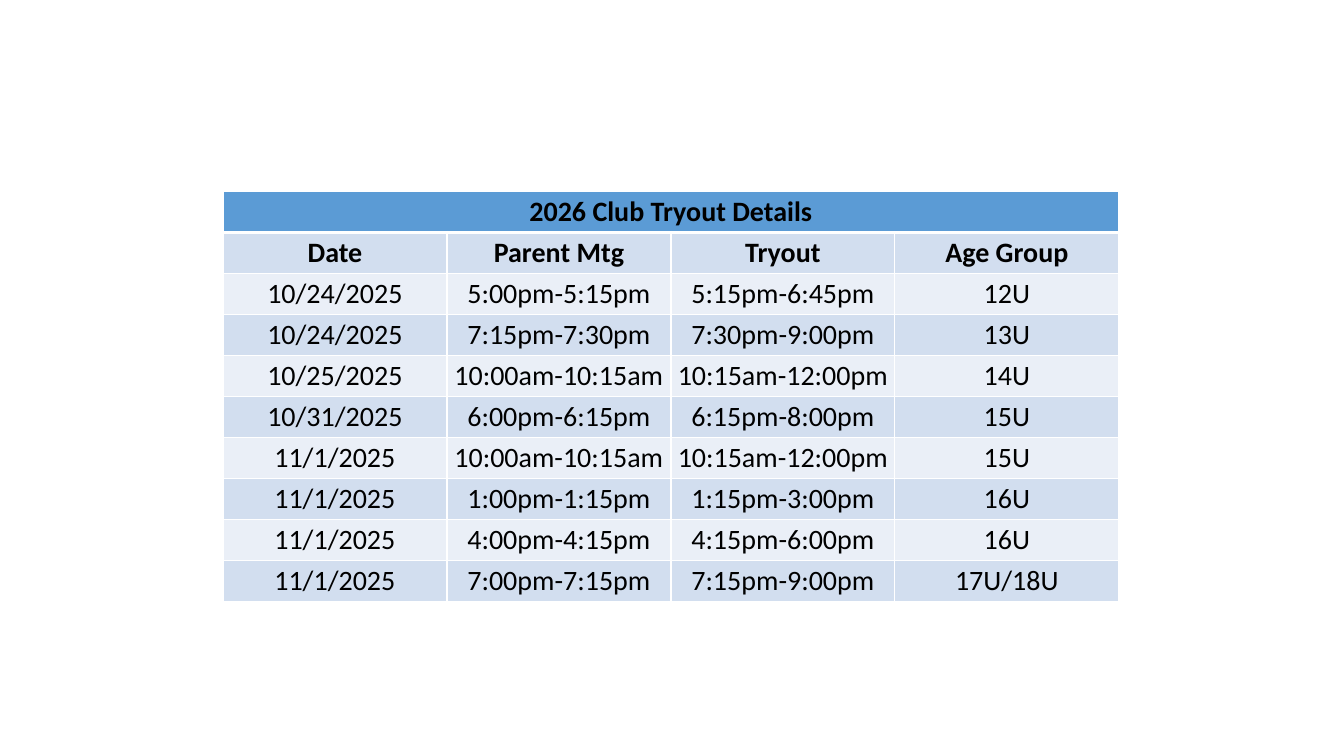
from lxml.etree import SubElement
from pptx import Presentation
from pptx.dml.color import RGBColor
from pptx.enum.text import MSO_ANCHOR, PP_ALIGN
from pptx.oxml.ns import qn
from pptx.util import Cm, Pt

HEADING_BLUE = RGBColor(0x5B, 0x9B, 0xD5)
BAND_DARK = RGBColor(0xD2, 0xDE, 0xEF)
BAND_LIGHT = RGBColor(0xEA, 0xEF, 0xF7)
BLACK = RGBColor(0, 0, 0)
WHITE = RGBColor(0xFF, 0xFF, 0xFF)

HEADING = "2026 Club Tryout Details"
SCHEDULE = [
    ("Date", "Parent Mtg", "Tryout", "Age Group"),
    ("10/24/2025", "5:00pm-5:15pm", "5:15pm-6:45pm", "12U"),
    ("10/24/2025", "7:15pm-7:30pm", "7:30pm-9:00pm", "13U"),
    ("10/25/2025", "10:00am-10:15am", "10:15am-12:00pm", "14U"),
    ("10/31/2025", "6:00pm-6:15pm", "6:15pm-8:00pm", "15U"),
    ("11/1/2025", "10:00am-10:15am", "10:15am-12:00pm", "15U"),
    ("11/1/2025", "1:00pm-1:15pm", "1:15pm-3:00pm", "16U"),
    ("11/1/2025", "4:00pm-4:15pm", "4:15pm-6:00pm", "16U"),
    ("11/1/2025", "7:00pm-7:15pm", "7:15pm-9:00pm", "17U/18U"),
]


def set_borders(cell, top, bottom):
    properties = cell._tc.get_or_add_tcPr()
    for side, points in (("L", 1), ("R", 1), ("T", top), ("B", bottom)):
        border = SubElement(properties, qn(f"a:ln{side}"), w=str(Pt(points)))
        fill = SubElement(border, qn("a:solidFill"))
        SubElement(fill, qn("a:srgbClr"), val=str(WHITE))


def format_cell(cell, fill, bold, top, bottom):
    set_borders(cell, top, bottom)
    cell.fill.solid()
    cell.fill.fore_color.rgb = fill
    cell.margin_left = cell.margin_right = cell.margin_top = cell.margin_bottom = 0
    cell.vertical_anchor = MSO_ANCHOR.MIDDLE
    paragraph = cell.text_frame.paragraphs[0]
    paragraph.alignment = PP_ALIGN.CENTER
    paragraph.font.size = Pt(20)
    for run in paragraph.runs:
        run.font.name = "Calibri"
        run.font.size = Pt(20)
        run.font.bold = bold
        run.font.color.rgb = BLACK


def add_schedule(slide, left, top, width, height):
    lines = [(HEADING, "", "", "")] + SCHEDULE
    schedule = slide.shapes.add_table(
        len(lines), len(SCHEDULE[0]), left, top, width, height
    ).table
    schedule.cell(0, 0).merge(schedule.cell(0, len(SCHEDULE[0]) - 1))
    for row, line in enumerate(lines):
        fill = HEADING_BLUE if row == 0 else BAND_DARK if row % 2 else BAND_LIGHT
        for column, text in enumerate(line):
            cell = schedule.cell(row, column)
            if text:
                cell.text_frame.text = text
            format_cell(
                cell, fill, row < 2,
                top=3 if row == 1 else 1,
                bottom=3 if row == 0 else 1,
            )


def main():
    presentation = Presentation()
    presentation.slide_width = Cm(33.87)
    presentation.slide_height = Cm(19.05)
    slide = presentation.slides.add_slide(presentation.slide_layouts[6])
    add_schedule(slide, Cm(5.62), Cm(4.83), Cm(22.58), Cm(10.32))
    presentation.save("out.pptx")


if __name__ == "__main__":
    main()
